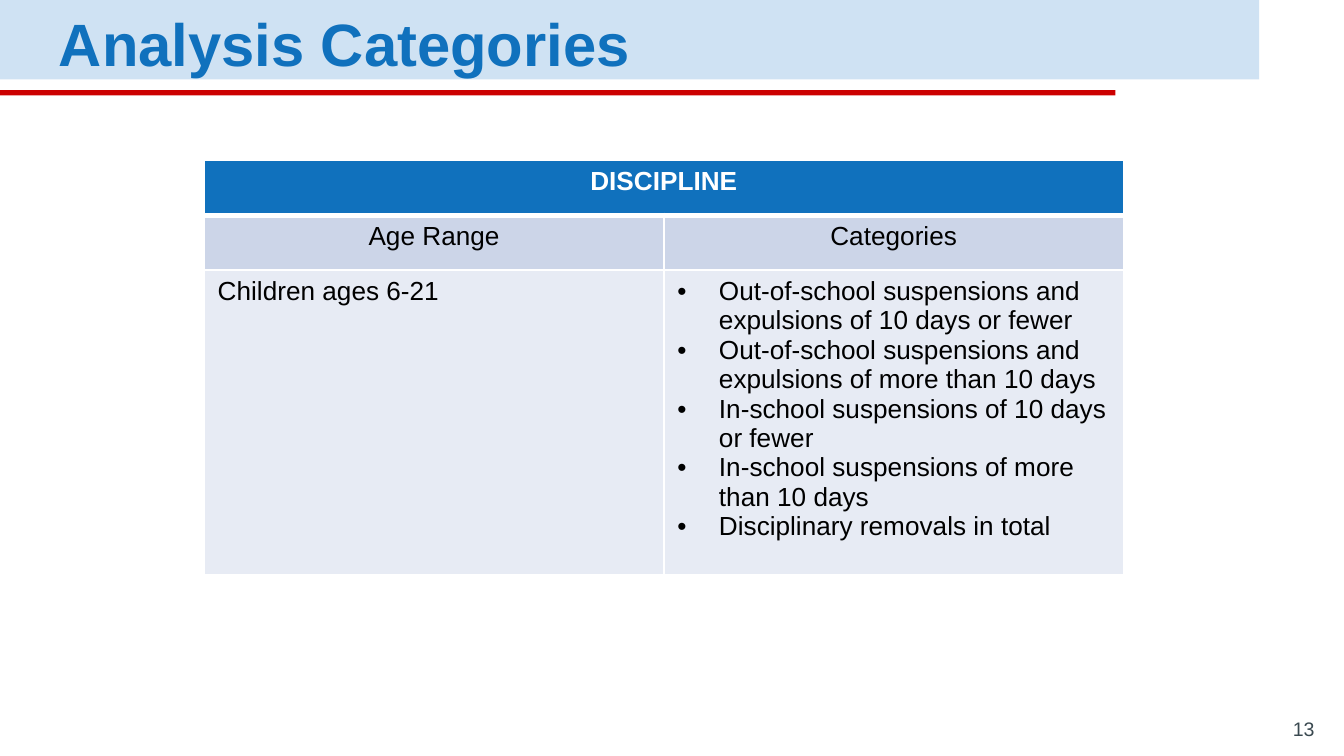
from lxml import etree
from pptx import Presentation
from pptx.dml.color import RGBColor
from pptx.enum.shapes import MSO_SHAPE
from pptx.enum.text import MSO_ANCHOR, PP_ALIGN
from pptx.oxml.ns import qn
from pptx.util import Inches, Pt

RECT = MSO_SHAPE.RECTANGLE
MIDDLE, BOTTOM = MSO_ANCHOR.MIDDLE, MSO_ANCHOR.BOTTOM
LEFT, CENTER, RIGHT = PP_ALIGN.LEFT, PP_ALIGN.CENTER, PP_ALIGN.RIGHT

BLUE = RGBColor(0x10, 0x71, 0xBD)
PALE_BLUE = RGBColor(0xCF, 0xE2, 0xF3)
RED = RGBColor(0xCC, 0x00, 0x00)
SLATE = RGBColor(0x3A, 0x49, 0x50)
BAND_DARK = RGBColor(0xCC, 0xD5, 0xE8)
BAND_LIGHT = RGBColor(0xE7, 0xEB, 0xF4)
WHITE = RGBColor(0xFF, 0xFF, 0xFF)
BLACK = RGBColor(0x00, 0x00, 0x00)

TITLE = "Analysis Categories"
PAGE = "13"
HEADING = "DISCIPLINE"
COLUMNS = ["Age Range", "Categories"]
AGES = ["Children ages 6-21"]
CATEGORIES = [
    "Out-of-school suspensions and expulsions of 10 days or fewer",
    "Out-of-school suspensions and expulsions of more than 10 days",
    "In-school suspensions of 10 days or fewer",
    "In-school suspensions of more than 10 days",
    "Disciplinary removals in total",
]
BARS = [(0, 9.37, 0.59, PALE_BLUE), (0.67, 8.3, 0.04, RED)]  # top, width, height, colour
# cell contents, fill, text colour, alignment, height, top and bottom border in points
ROWS = [
    ([[HEADING], []], BLUE, WHITE, CENTER, 0.41, 1, 3),
    ([[c] for c in COLUMNS], BAND_DARK, BLACK, CENTER, 0.41, 3, 1),
    ([AGES, CATEGORIES], BAND_LIGHT, BLACK, LEFT, 2.27, 1, 1),
]
COLUMN_WIDTH = 3.42


def add_run(p, text, size, color, bold=False):
    r = p.add_run()
    r.text = text
    r.font.name = "Arial"
    r.font.size = Pt(size)
    r.font.bold = bold
    r.font.color.rgb = color


def add_text(s, box, text, size, color, anchor, align, bold=False):
    tf = s.shapes.add_textbox(*map(Inches, box)).text_frame
    tf.word_wrap = True
    tf.vertical_anchor = anchor
    tf.margin_left = tf.margin_right = tf.margin_top = tf.margin_bottom = Inches(0.1)
    p = tf.paragraphs[0]
    p.alignment = align
    add_run(p, text, size, color, bold)
    return p


def add_bullet(p):
    pPr = p._p.get_or_add_pPr()
    pPr.set("marL", str(Inches(0.31)))
    pPr.set("indent", str(-Inches(0.31)))
    etree.SubElement(pPr, qn("a:buFont")).set("typeface", "Arial")
    etree.SubElement(pPr, qn("a:buChar")).set("char", "•")


def add_borders(cell, top, bottom):
    tcPr = cell._tc.get_or_add_tcPr()
    for side, width in (("L", 1), ("R", 1), ("T", top), ("B", bottom)):
        ln = etree.SubElement(tcPr, qn("a:ln" + side), w=str(Pt(width)))
        fill = etree.SubElement(ln, qn("a:solidFill"))
        etree.SubElement(fill, qn("a:srgbClr"), val=str(WHITE))


prs = Presentation()
prs.slide_width = Inches(10)
prs.slide_height = prs.slide_width * 9 // 16
s = prs.slides.add_slide(prs.slide_layouts[6])

for top, width, height, color in BARS:
    bar = s.shapes.add_shape(RECT, 0, Inches(top), Inches(width), Inches(height))
    bar.shadow.inherit = False
    bar.fill.solid()
    bar.fill.fore_color.rgb = color
    bar.line.fill.background()

title = add_text(s, (0.34, 0.03, 9.03, 0.49), TITLE, 32, BLUE, MIDDLE, LEFT, True)
title.line_spacing = 1.15
title.space_after = Pt(16)
add_text(s, (9.28, 5.34, 0.6, 0.26), PAGE, 10.5, SLATE, BOTTOM, RIGHT)

table_width = COLUMN_WIDTH * len(COLUMNS)
table_height = sum(row[4] for row in ROWS)
table = s.shapes.add_table(len(ROWS), len(COLUMNS), Inches(1.52), Inches(1.19),
                           Inches(table_width), Inches(table_height)).table
for i, (cells, fill, color, align, height, top, bottom) in enumerate(ROWS):
    table.rows[i].height = Inches(height)
    for j, lines in enumerate(cells):
        cell = table.cell(i, j)
        add_borders(cell, top, bottom)
        cell.fill.solid()
        cell.fill.fore_color.rgb = fill
        tf = cell.text_frame
        for n, line in enumerate(lines):
            p = tf.add_paragraph() if n else tf.paragraphs[0]
            if lines is CATEGORIES:
                add_bullet(p)
            p.alignment = align
            add_run(p, line, 14, color, bold=line == HEADING)
table.cell(0, 0).merge(table.cell(0, 1))

prs.save("out.pptx")
